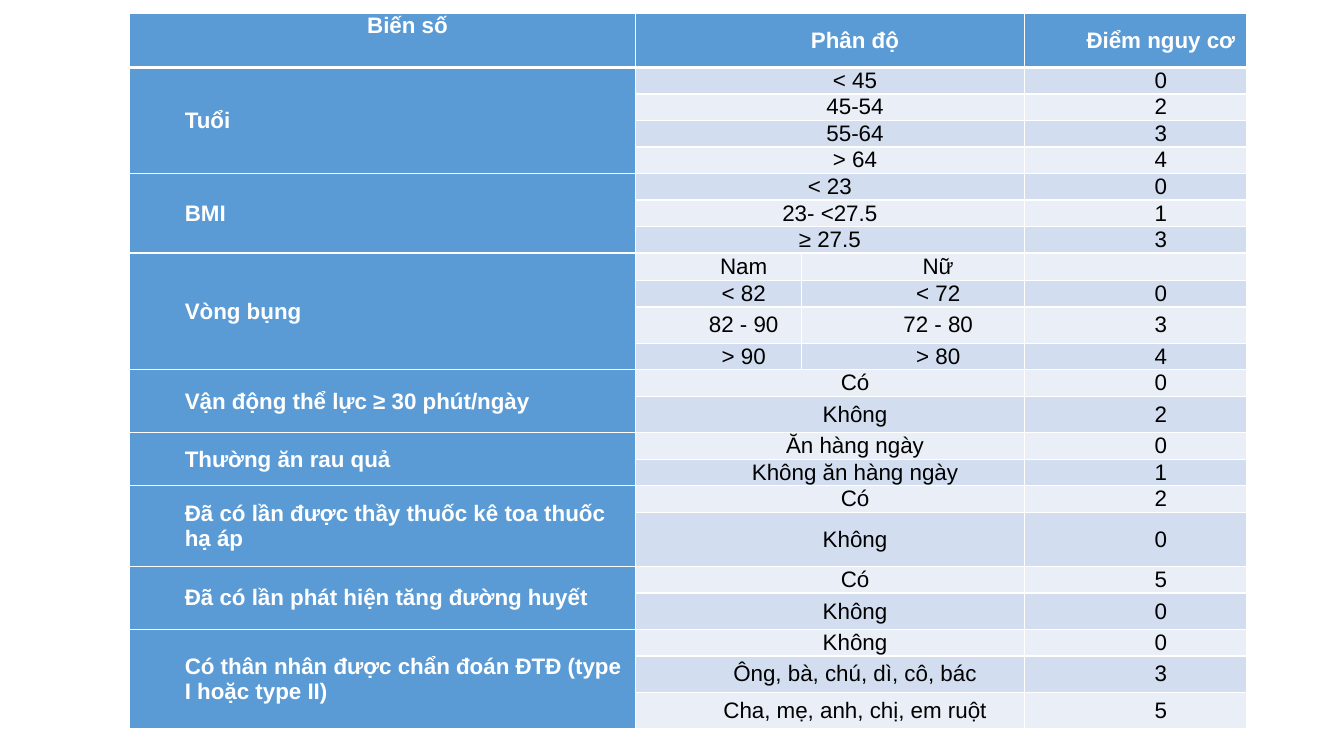
from lxml.etree import SubElement as Sub
from pptx import Presentation
from pptx.dml.color import RGBColor as Rgb
from pptx.enum.text import MSO_ANCHOR as Anchor, PP_ALIGN as Align
from pptx.oxml.ns import qn
from pptx.util import Pt

HEX = {"head": "5B9BD5", "odd": "D2DEEF", "even": "EAEFF7",
       "white": "FFFFFF", "black": "000000"}
SIZE = 16
INDENT = 36
LOW, MID, HIGH = 18.95, 26, 38.8
WIDTHS = [361.4, 118.8, 159.1, 159.1]
TALL = {0: HIGH, 10: MID, 13: MID, 17: HIGH, 19: MID, 21: MID, 22: MID}
HEADS = ["Biến số", "Phân độ", "Điểm nguy cơ"]

# Each level is (grade, points), or (men, women, points) where it is split
GROUPS = [
    ("Tuổi", [("< 45", "0"), ("45-54", "2"), ("55-64", "3"), ("> 64", "4")]),
    ("BMI", [("< 23", "0"), ("23- <27.5", "1"), ("≥ 27.5", "3")]),
    ("Vòng bụng", [("Nam", "Nữ", ""), ("< 82", "< 72", "0"),
                   ("82 - 90", "72 - 80", "3"), ("> 90", "> 80", "4")]),
    ("Vận động thể lực ≥ 30 phút/ngày", [("Có", "0"), ("Không", "2")]),
    ("Thường ăn rau quả", [("Ăn hàng ngày", "0"), ("Không ăn hàng ngày", "1")]),
    ("Đã có lần được thầy thuốc kê toa thuốc hạ áp",
     [("Có", "2"), ("Không", "0")]),
    ("Đã có lần phát hiện tăng đường huyết", [("Có", "5"), ("Không", "0")]),
    ("Có thân nhân được chẩn đoán ĐTĐ (type I hoặc type II)",
     [("Không", "0"), ("Ông, bà, chú, dì, cô, bác", "3"),
      ("Cha, mẹ, anh, chị, em ruột", "5")]),
]


def style(cell, row, col):
    """Give a cell its margins, white borders and fill."""
    form = {"margin_left": Pt(3.6), "margin_right": Pt(3.6), "margin_top": 0,
            "margin_bottom": 0, "vertical_anchor": Anchor.MIDDLE}
    for key, val in form.items():
        setattr(cell, key, val)
    props = cell._tc.get_or_add_tcPr()
    for side in "LRTB":
        thick = (row, side) in ((0, "B"), (1, "T"))
        line = Sub(props, qn(f"a:ln{side}"), w=str(Pt(3 if thick else 1)))
        Sub(Sub(line, qn("a:solidFill")), qn("a:srgbClr"), val=HEX["white"])
    tone = "head" if row == 0 or col == 0 else "odd" if row % 2 else "even"
    cell.fill.solid()
    cell.fill.fore_color.rgb = Rgb.from_string(HEX[tone])
    Sub(cell.text_frame.paragraphs[0]._p, qn("a:endParaRPr"), sz=str(SIZE * 100))


def write(cell, text, head=False, align=Align.CENTER, indent=INDENT):
    para = cell.text_frame.paragraphs[0]
    para.alignment = align
    para.space_before = Pt(4)
    para._p.get_or_add_pPr().set("marL", str(Pt(indent)))
    if text:
        run = para.add_run()
        run.text = text
        for key, val in {"name": "Arial", "size": Pt(SIZE), "bold": head}.items():
            setattr(run.font, key, val)
        run.font.color.rgb = Rgb.from_string(HEX["white" if head else "black"])


deck = Presentation()
deck.slide_width, deck.slide_height = Pt(960), Pt(540)
slide = deck.slides.add_slide(deck.slide_layouts[6])

count = 1 + sum(len(levels) for _, levels in GROUPS)
tall = [TALL.get(row, LOW) for row in range(count)]
grid = slide.shapes.add_table(count, len(WIDTHS), Pt(92.4), Pt(9.4),
                              Pt(sum(WIDTHS)), Pt(sum(tall))).table
for col, width in enumerate(WIDTHS):
    grid.columns[col].width = Pt(width)
for row, height in enumerate(tall):
    grid.rows[row].height = Pt(height)
    for col in range(len(WIDTHS)):
        style(grid.cell(row, col), row, col)

grid.cell(0, 1).merge(grid.cell(0, 2))
for col, text in zip((0, 1, 3), HEADS):
    write(grid.cell(0, col), text, head=True)
grid.cell(0, 0).vertical_anchor = Anchor.TOP

row = 1
for name, levels in GROUPS:
    grid.cell(row, 0).merge(grid.cell(row + len(levels) - 1, 0))
    write(grid.cell(row, 0), name, head=True, align=Align.LEFT)
    for *grades, points in levels:
        if len(grades) == 1:
            grid.cell(row, 1).merge(grid.cell(row, 2))
        for col, text in enumerate(grades, 1):
            write(grid.cell(row, col), text, indent=0 if name == "BMI" else INDENT)
        write(grid.cell(row, 3), points)
        row += 1

deck.save("out.pptx")
